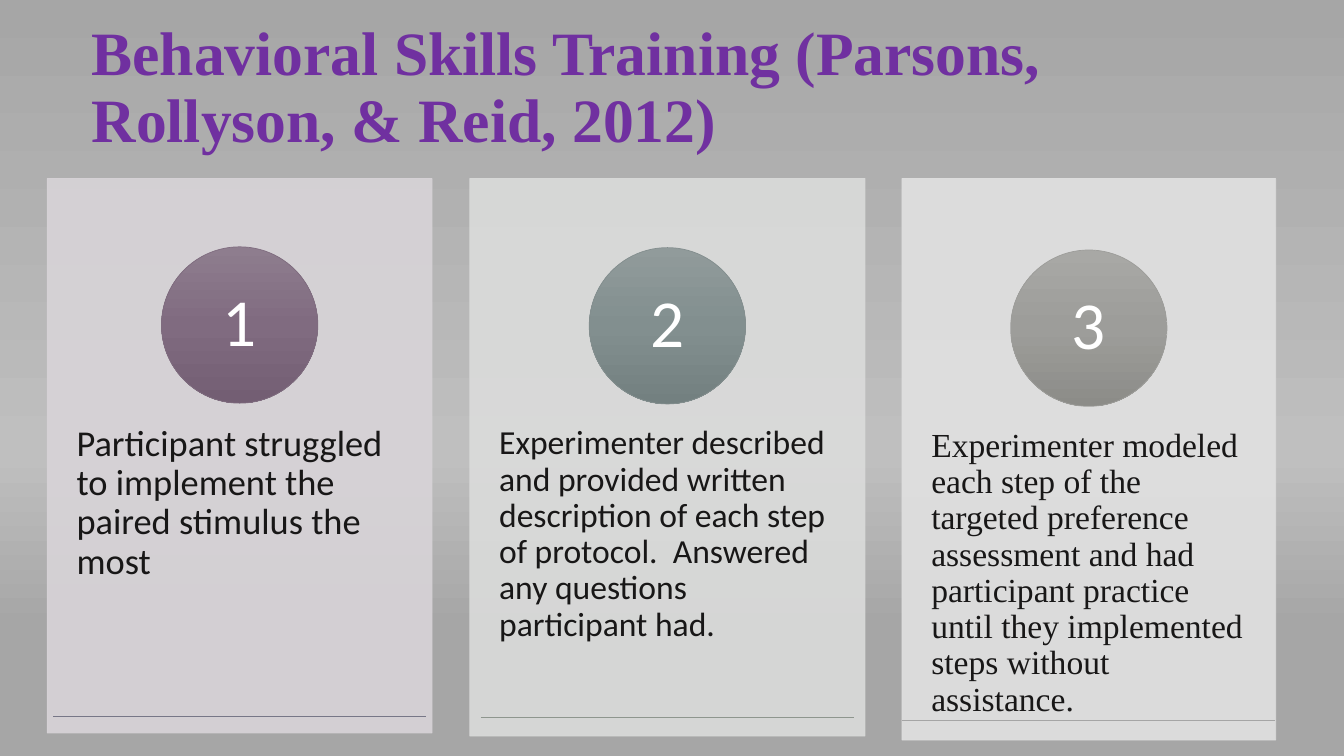
"""Build the Behavioral Skills Training slide with three numbered cards."""
from lxml import etree
from pptx import Presentation
from pptx.dml.color import RGBColor
from pptx.enum import shapes, text
from pptx.oxml.ns import qn
from pptx.util import Cm, Pt

PURPLE = RGBColor(0x70, 0x30, 0xA0)
INK = RGBColor(0x18, 0x17, 0x17)
WHITE = RGBColor(0xFF, 0xFF, 0xFF)
GREY = RGBColor(0xA6, 0xA6, 0xA6)
SILVER = RGBColor(0xBF, 0xBF, 0xBF)
BACKDROP = [(0, GREY), (60, SILVER), (83, GREY), (100, GREY)]
CARD_TOP, CIRCLE, RULE = 4.5, 3.94, 9.4

CARDS = [
    (1.19, 9.7, 13.97, 18.06, "Calibri", 26,
     "Participant struggled to implement the paired stimulus the most",
     RGBColor(0xD8, 0xD4, 0xD8), RGBColor(0x7F, 0x6C, 0x7F), RGBColor(0x77, 0x77, 0x87),
     [(0, RGBColor(0x8E, 0x7D, 0x8E)), (50, RGBColor(0x80, 0x6B, 0x80)),
      (100, RGBColor(0x73, 0x5E, 0x73))]),
    (11.84, 9.96, 14.05, 18.08, "Calibri", 24,
     "Experimenter described and provided written description of each step of protocol.  "
     "Answered any questions participant had.",
     RGBColor(0xDB, 0xDC, 0xDB), RGBColor(0x83, 0x8E, 0x8E), RGBColor(0x8E, 0x96, 0x8E),
     [(0, RGBColor(0x91, 0x9B, 0x9B)), (50, RGBColor(0x82, 0x8F, 0x8F)),
      (100, RGBColor(0x73, 0x80, 0x80))]),
    (22.73, 9.42, 14.15, 18.14, "Times New Roman", 24,
     "Experimenter modeled each step of the targeted preference assessment and had "
     "participant practice until they implemented steps without assistance.",
     RGBColor(0xE1, 0xE1, 0xE1), RGBColor(0x9D, 0x9D, 0x9A), RGBColor(0xA5, 0xA5, 0xA5),
     [(0, RGBColor(0xA8, 0xA8, 0xA5)), (50, RGBColor(0x9D, 0x9D, 0x9A)),
      (100, RGBColor(0x8C, 0x8C, 0x88))]),
]


def set_gradient(fill, element, stops):
    """Fill from top to bottom with the given stops."""
    fill.gradient()
    fill.gradient_angle = 270
    gs_list = element.find(".//" + qn("a:gsLst"))
    for gs in list(gs_list):
        gs_list.remove(gs)
    for position, color in stops:
        gs = etree.SubElement(gs_list, qn("a:gs"), pos=str(position * 1000))
        etree.SubElement(gs, qn("a:srgbClr"), val=str(color))


def write(sp, words, font, size, color, inset_x, inset_y):
    """Put one formatted paragraph into a shape and return it."""
    tf = sp.text_frame
    tf.word_wrap = True
    tf.auto_size = text.MSO_AUTO_SIZE.NONE
    tf.margin_left = tf.margin_right = Cm(inset_x)
    tf.margin_top = tf.margin_bottom = Cm(inset_y)
    tf.text = words
    p = tf.paragraphs[0]
    p.line_spacing = 0.9
    p.alignment = text.PP_ALIGN.LEFT
    r = p.runs[0]
    r.font.name, r.font.size = font, Pt(size)
    r.font.color.rgb = color
    return p


prs = Presentation()
prs.slide_width, prs.slide_height = Cm(33.87), Cm(19.05)
s = prs.slides.add_slide(prs.slide_layouts[5])
set_gradient(s.background.fill, s.element, BACKDROP)

title = s.shapes.title
title.left, title.top, title.width, title.height = Cm(2.06), Cm(0.41), Cm(29.21), Cm(3.68)
p = write(title, "Behavioral Skills Training (Parsons, Rollyson, & Reid, 2012)",
          "Times New Roman", 44, PURPLE, 0.25, 0.13)
p.runs[0].font.bold = True
title.text_frame.vertical_anchor = text.MSO_ANCHOR.MIDDLE

for number, (left, width, height, rule_y, font, size, words,
             card_color, edge_color, rule_color, stops) in enumerate(CARDS, 1):
    center = left + width / 2

    card = s.shapes.add_shape(shapes.MSO_SHAPE.RECTANGLE,
                              Cm(left), Cm(CARD_TOP), Cm(width), Cm(height))
    card.shadow.inherit = False
    card.fill.solid()
    card.fill.fore_color.rgb = card_color
    card.line.color.rgb = card_color
    card.line.width = Pt(0.5)
    for color in card.element.spPr.iter(qn("a:srgbClr")):
        etree.SubElement(color, qn("a:alpha"), val="90000")

    body = s.shapes.add_textbox(Cm(left), Cm(rule_y - 8.26), Cm(width), Cm(8.4))
    write(body, words, font, size, INK, 0.74, 0.91)

    circle = s.shapes.add_shape(shapes.MSO_SHAPE.OVAL, Cm(center - CIRCLE / 2),
                                Cm(rule_y - 11.84), Cm(CIRCLE), Cm(CIRCLE))
    circle.shadow.inherit = False
    set_gradient(circle.fill, circle.element, stops)
    circle.line.color.rgb = edge_color
    circle.line.width = Pt(0.5)
    p = write(circle, str(number), "Calibri", 48, WHITE, 0.3, 0.03)
    p.alignment = text.PP_ALIGN.CENTER
    circle.text_frame.vertical_anchor = text.MSO_ANCHOR.MIDDLE

    rule = s.shapes.add_connector(shapes.MSO_CONNECTOR.STRAIGHT, Cm(center - RULE / 2),
                                  Cm(rule_y), Cm(center + RULE / 2), Cm(rule_y))
    rule.line.color.rgb = rule_color
    rule.line.width = Pt(0.5)
    etree.SubElement(rule.element.spPr, qn("a:effectLst"))

prs.save("out.pptx")
